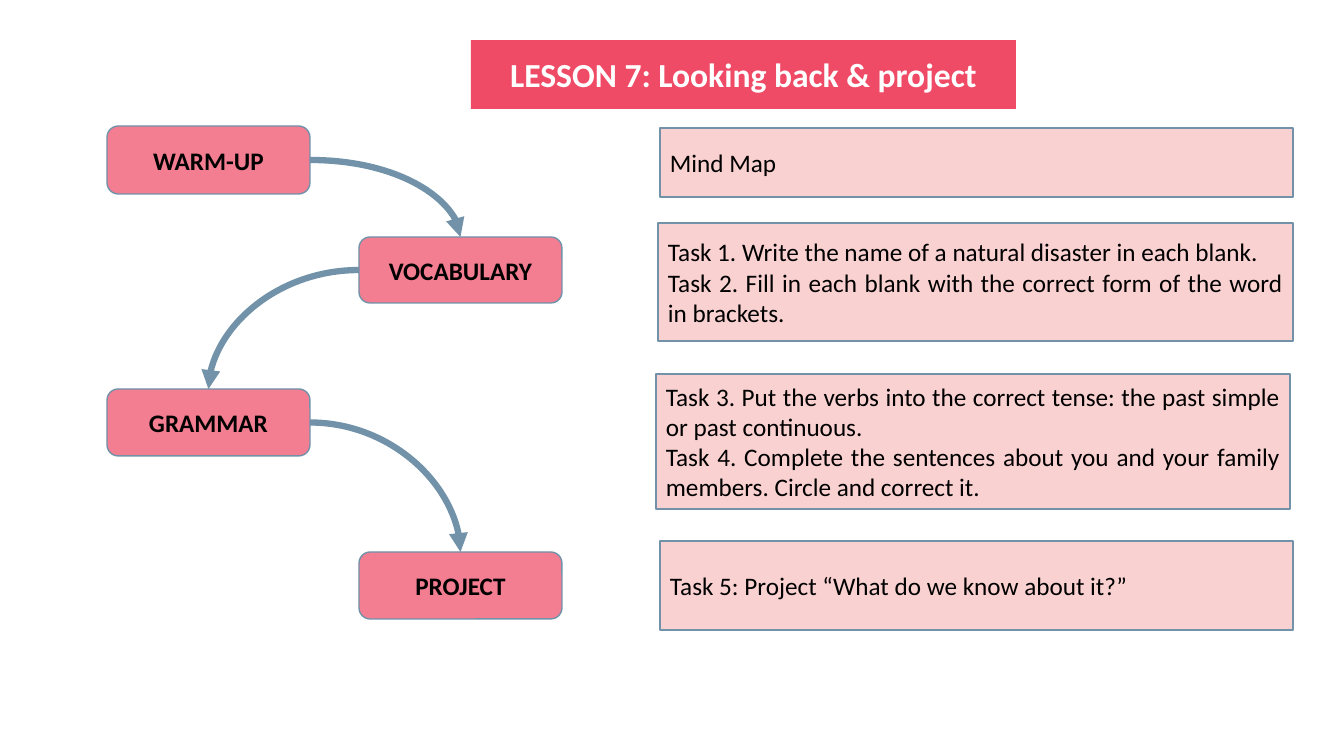
"""Build the lesson overview slide with its stages and tasks."""
from pptx import Presentation
from pptx.dml.color import RGBColor
from pptx.enum.shapes import MSO_CONNECTOR, MSO_SHAPE
from pptx.enum.text import MSO_ANCHOR, MSO_AUTO_SIZE, PP_ALIGN
from pptx.oxml.ns import qn
from pptx.oxml.xmlchemy import OxmlElement
from pptx.util import Pt

RECTANGLE, ROUNDED = MSO_SHAPE.RECTANGLE, MSO_SHAPE.ROUNDED_RECTANGLE
CURVE = MSO_CONNECTOR.CURVE
MIDDLE = MSO_ANCHOR.MIDDLE
LEFT, CENTER, JUSTIFY = PP_ALIGN.LEFT, PP_ALIGN.CENTER, PP_ALIGN.JUSTIFY
TOP_SIDE, LEFT_SIDE, RIGHT_SIDE = 0, 1, 3

SLIDE_SIZE = (1344, 756)
EMU_PER_PX = 12192000 / SLIDE_SIZE[0]
FONT = "Calibri"
COLORS = {
    "title": "EF4B66",
    "title_text": "FFFFFF",
    "stage": "F37D91",
    "task": "F7A5A5",
    "line": "7192A9",
    "text": "000000",
}

TITLE = "LESSON 7: Looking back & project"
TITLE_BOX = (471, 40, 545, 69)
TITLE_ROUNDING = 42700
COLUMN_LEFTS = (107, 359)
STAGE_WIDTH = 203
STAGES = [
    ("WARM-UP", 126, 68),
    ("VOCABULARY", 237, 66),
    ("GRAMMAR", 389, 67),
    ("PROJECT", 552, 67),
]
TASKS = [
    ((660, 128, 633, 69), LEFT, ["Mind Map"]),
    ((658, 223, 635, 118), JUSTIFY, [
        "Task 1. Write the name of a natural disaster in each blank.",
        "Task 2. Fill in each blank with the correct form of the word in brackets.",
    ]),
    ((656, 374, 634, 135), JUSTIFY, [
        "Task 3. Put the verbs into the correct tense: the past simple or past continuous.",
        "Task 4. Complete the sentences about you and your family members. "
        "Circle and correct it.",
    ]),
    ((660, 541, 633, 89), JUSTIFY, ["Task 5: Project “What do we know about it?”"]),
]


def px(length):
    return round(length * EMU_PER_PX)


def color(name):
    return RGBColor.from_string(COLORS[name])


def add_child(parent, tag, **attributes):
    child = OxmlElement(tag)
    for name, value in attributes.items():
        child.set(name, value)
    parent.append(child)
    return child


def paint(shape, fill):
    shape.fill.solid()
    shape.fill.fore_color.rgb = color(fill)


def write(shape, lines, align, size=18, bold=False, text_color="text"):
    frame = shape.text_frame
    frame.word_wrap = True
    frame.vertical_anchor = MIDDLE
    frame.text = "\n".join(lines)
    for paragraph in frame.paragraphs:
        paragraph.alignment = align
        font = paragraph.font
        font.name, font.size, font.bold = FONT, Pt(size), bold
        font.color.rgb = color(text_color)


def add_box(slide, kind, box, fill):
    shape = slide.shapes.add_shape(kind, *map(px, box))
    shape.shadow.inherit = False
    paint(shape, fill)
    shape.line.color.rgb = color("line")
    shape.line.width = Pt(1)
    return shape


def format_title(title):
    title.left, title.top, title.width, title.height = map(px, TITLE_BOX)
    geometry = add_child(title._element.spPr, "a:prstGeom", prst="roundRect")
    adjustments = add_child(geometry, "a:avLst")
    add_child(adjustments, "a:gd", name="adj", fmla=f"val {TITLE_ROUNDING}")
    paint(title, "title")
    write(title, [TITLE], CENTER, 24, True, "title_text")
    title.text_frame.auto_size = MSO_AUTO_SIZE.NONE


def add_arrow(slide, start, end):
    side = RIGHT_SIDE if start.left < end.left else LEFT_SIDE
    arrow = slide.shapes.add_connector(CURVE, 0, 0, 0, 0)
    arrow.begin_connect(start, side)
    arrow.end_connect(end, TOP_SIDE)
    arrow.line.color.rgb = color("line")
    arrow.line.width = Pt(4.5)
    properties = arrow._element.spPr
    properties.find(qn("a:prstGeom")).set("prst", "curvedConnector2")
    add_child(properties.find(qn("a:ln")), "a:tailEnd", type="triangle")
    add_child(properties, "a:effectLst")


def main():
    presentation = Presentation()
    presentation.slide_width, presentation.slide_height = map(px, SLIDE_SIZE)
    slide = presentation.slides.add_slide(presentation.slide_layouts[5])
    format_title(slide.shapes.title)

    for box, align, lines in TASKS:
        task = add_box(slide, RECTANGLE, box, "task")
        fill_color = task._element.spPr.find(qn("a:solidFill"))[0]
        add_child(fill_color, "a:alpha", val="50000")
        write(task, lines, align)

    stages = []
    for index, (name, top, height) in enumerate(STAGES):
        box = (COLUMN_LEFTS[index % 2], top, STAGE_WIDTH, height)
        stage = add_box(slide, ROUNDED, box, "stage")
        write(stage, [name], CENTER, bold=True)
        stages.append(stage)

    for start, end in zip(stages, stages[1:]):
        add_arrow(slide, start, end)

    presentation.save("out.pptx")


if __name__ == "__main__":
    main()
